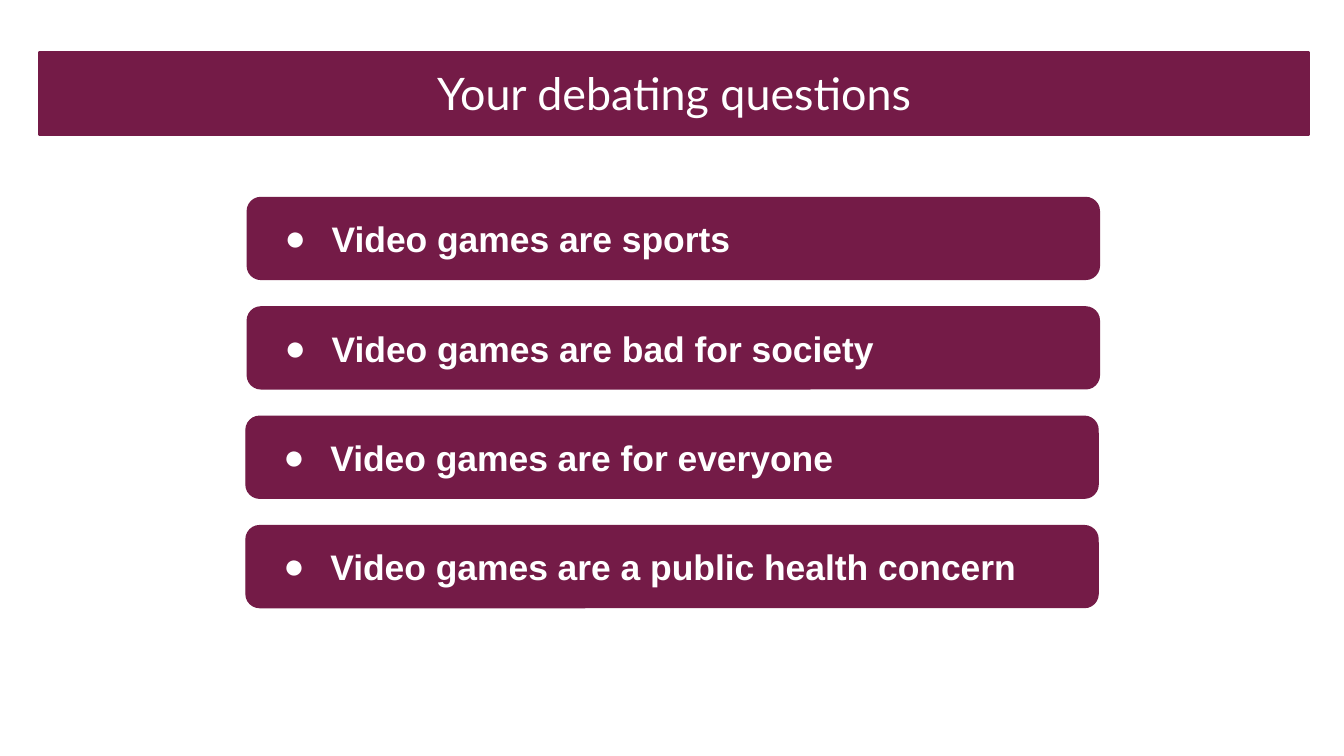
from lxml.etree import SubElement
from pptx import Presentation
from pptx.dml.color import RGBColor
from pptx.enum.shapes import MSO_SHAPE
from pptx.enum.text import MSO_ANCHOR, MSO_AUTO_SIZE, PP_ALIGN
from pptx.oxml.ns import qn
from pptx.util import Pt

# Content
TITLE = "Your debating questions"
QUESTIONS = [
    "Video games are sports",
    "Video games are bad for society",
    "Video games are for everyone",
    "Video games are a public health concern",
]

# Look and layout, in points
PLUM, WHITE = "741B47", "FFFFFF"
TITLE_BOX = (20.9, 28.1, 680.4, 43.9)
LEFTS = [132.5, 132.5, 131.8, 131.8]
TOP, PITCH, WIDTH, HEIGHT = 105.8, 58.6, 456.5, 43.9
INSET = 7.2
TITLE_FONT = {"name": "Lato", "size": Pt(24), "bold": False}
QUESTION_FONT = {"name": "Arial", "size": Pt(19), "bold": True}


def color(fmt, value):
    fmt.rgb = RGBColor.from_string(value)


def set_attrs(obj, values):
    for name, value in values.items():
        setattr(obj, name, value)


def format_box(sp, text, font, line_width, anchor, align):
    sp.fill.solid()
    color(sp.fill.fore_color, PLUM)
    color(sp.line.color, PLUM)
    sp.line.width = Pt(line_width)
    tf = sp.text_frame
    set_attrs(tf, {
        "word_wrap": True,
        "auto_size": MSO_AUTO_SIZE.NONE,
        "vertical_anchor": anchor,
        **{f"margin_{side}": Pt(INSET) for side in ("left", "top", "right", "bottom")},
    })
    p = tf.paragraphs[0]
    p.alignment = align
    r = p.add_run()
    r.text = text
    set_attrs(r.font, font)
    color(r.font.color, WHITE)
    return p


def add_bullet(p, indent, hanging):
    pPr = p._p.get_or_add_pPr()
    pPr.set("marL", str(Pt(indent)))
    pPr.set("indent", str(-Pt(hanging)))
    clr = SubElement(pPr, qn("a:buClr"))
    SubElement(clr, qn("a:srgbClr"), val=WHITE)
    SubElement(pPr, qn("a:buFont"), typeface="Arial")
    SubElement(pPr, qn("a:buChar"), char="●")


prs = Presentation()
prs.slide_width, prs.slide_height = Pt(720), Pt(405)
s = prs.slides.add_slide(prs.slide_layouts[5])

# Title bar
title = s.shapes.title
set_attrs(title, dict(zip(("left", "top", "width", "height"), map(Pt, TITLE_BOX))))
format_box(title, TITLE, TITLE_FONT, 1.5, MSO_ANCHOR.TOP, PP_ALIGN.CENTER)

# Question boxes
for i, (left, question) in enumerate(zip(LEFTS, QUESTIONS)):
    sp = s.shapes.add_shape(MSO_SHAPE.ROUNDED_RECTANGLE, Pt(left),
                            Pt(TOP + i * PITCH), Pt(WIDTH), Pt(HEIGHT))
    sp.shadow.inherit = False
    p = format_box(sp, question, QUESTION_FONT, 0.75, MSO_ANCHOR.MIDDLE, PP_ALIGN.LEFT)
    add_bullet(p, 36, 25.2)

prs.save("out.pptx")
